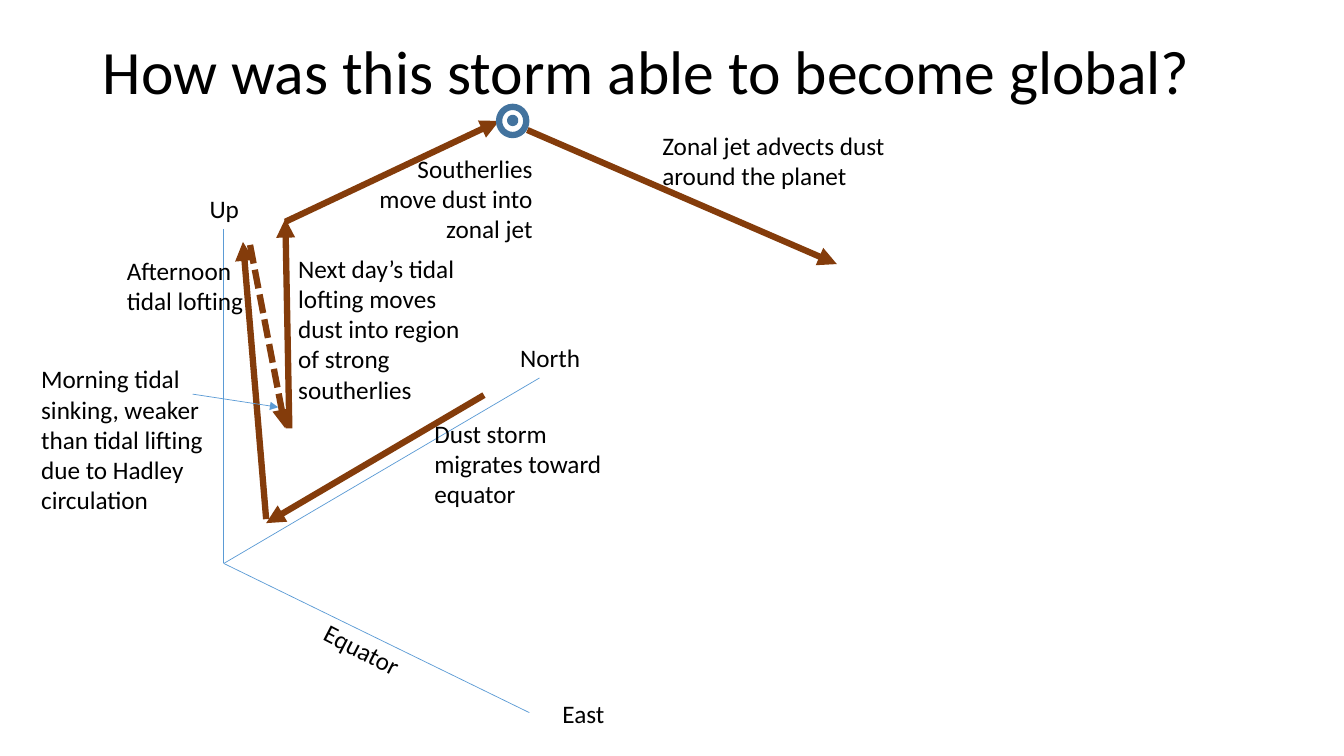
from pptx import Presentation
from pptx.dml.color import RGBColor
from pptx.enum.dml import MSO_LINE
from pptx.enum.shapes import MSO_CONNECTOR, MSO_SHAPE
from pptx.enum.text import MSO_ANCHOR, PP_ALIGN
from pptx.oxml.ns import qn
from pptx.util import Inches, Pt
from lxml import etree

STRAIGHT = MSO_CONNECTOR.STRAIGHT
OVAL = MSO_SHAPE.OVAL
DASH = MSO_LINE.SQUARE_DOT
MIDDLE, TOP = MSO_ANCHOR.MIDDLE, MSO_ANCHOR.TOP
LEFT, RIGHT = PP_ALIGN.LEFT, PP_ALIGN.RIGHT

BLACK = RGBColor(0x00, 0x00, 0x00)
BLUE = RGBColor(0x5B, 0x9B, 0xD5)
BROWN = RGBColor(0x84, 0x3C, 0x0B)
STEEL = RGBColor(0x43, 0x73, 0x9E)

ORIGIN = (2.22, 5.59)
AXES = [(5.35, 3.75), (5.25, 7.07), (2.22, 2.27)]
DUST = [
    ((4.8, 3.92), (2.64, 5.19), None),
    ((2.64, 5.15), (2.41, 2.4), None),
    ((2.48, 2.43), (2.83, 4.25), DASH),
    ((2.87, 4.25), (2.83, 2.17), None),
    ((2.83, 2.2), (4.95, 1.2), None),
    ((5.23, 1.29), (8.3, 2.62), None),
]
JET = [(4.95, 1.06, 0.27, 0.28), (5.06, 1.17, 0.05, 0.05)]
LABELS = [
    ("North", (5.06, 3.35, 0.84, 0.4)),
    ("East", (5.48, 6.88, 0.67, 0.4)),
    ("Up", (1.98, 1.87, 0.5, 0.4)),
]
NOTES = [
    ("Afternoon tidal lofting", (1.16, 2.48, 1.38, 0.71)),
    ("Morning tidal sinking, weaker than tidal lifting due to Hadley circulation",
     (0.31, 3.56, 2.2, 1.62)),
    ("Next day’s tidal lofting moves dust into region of strong southerlies",
     (2.86, 2.46, 2.06, 1.62)),
    ("Zonal jet advects dust around the planet", (6.47, 1.24, 2.52, 0.71)),
    ("Dust storm migrates toward equator", (4.21, 4.1, 2.2, 1.01)),
]


def write(frame, text, size, align, anchor):
    """Fill a text frame with one styled paragraph."""
    frame.text = text
    frame.word_wrap = True
    frame.vertical_anchor = anchor
    para = frame.paragraphs[0]
    para.alignment = align
    para.font.name = "Calibri"
    para.font.size = Pt(size)
    para.font.color.rgb = BLACK
    return para


def add_title(slide, text):
    """Place and format the title."""
    title = slide.shapes.title
    title.left, title.top = Inches(0.92), Inches(0.01)
    title.width, title.height = Inches(11.5), Inches(1.45)
    write(title.text_frame, text, 44, LEFT, MIDDLE).line_spacing = 0.9


def add_label(slide, text, box, align=LEFT, turn=0, wrap=True):
    """Add a text box, turned if asked."""
    label = slide.shapes.add_textbox(*map(Inches, box))
    label.rotation = turn
    write(label.text_frame, text, 18, align, TOP)
    label.text_frame.word_wrap = wrap


def add_line(slide, start, end, color, width, head=False, dash=None):
    """Add a straight line with an optional arrowhead and dash."""
    line = slide.shapes.add_connector(STRAIGHT, *map(Inches, start + end))
    line.line.color.rgb = color
    line.line.width = Pt(width)
    if dash:
        line.line.dash_style = dash
    if head:
        tail = etree.SubElement(line.line._get_or_add_ln(), qn("a:tailEnd"))
        tail.set("type", "triangle")
    etree.SubElement(line._element.spPr, qn("a:effectLst"))


def add_ring(slide, box):
    """Add an unfilled oval."""
    ring = slide.shapes.add_shape(OVAL, *map(Inches, box))
    ring.shadow.inherit = False
    ring.fill.background()
    ring.line.color.rgb = STEEL
    ring.line.width = Pt(4.5)


def main():
    """Build the slide and save it."""
    deck = Presentation()
    deck.slide_width, deck.slide_height = Inches(13.33), Inches(7.5)
    slide = deck.slides.add_slide(deck.slide_layouts[5])
    add_title(slide, "How was this storm able to become global?")
    for end in AXES:
        add_line(slide, ORIGIN, end, BLUE, 0.5)
    for text, box in LABELS:
        add_label(slide, text, box, wrap=False)
    add_label(slide, "Equator", (3.09, 6.26, 1.07, 0.4), turn=27.3, wrap=False)
    for start, end, dash in DUST:
        add_line(slide, start, end, BROWN, 4.5, True, dash)
    for box in JET:
        add_ring(slide, box)
    add_line(slide, (1.91, 3.91), (2.76, 4.04), BLUE, 0.5, True)
    for text, box in NOTES:
        add_label(slide, text, box)
    add_label(slide, "Southerlies move dust into zonal jet",
              (3.66, 1.47, 1.72, 1.01), RIGHT)
    deck.save("out.pptx")


if __name__ == "__main__":
    main()
